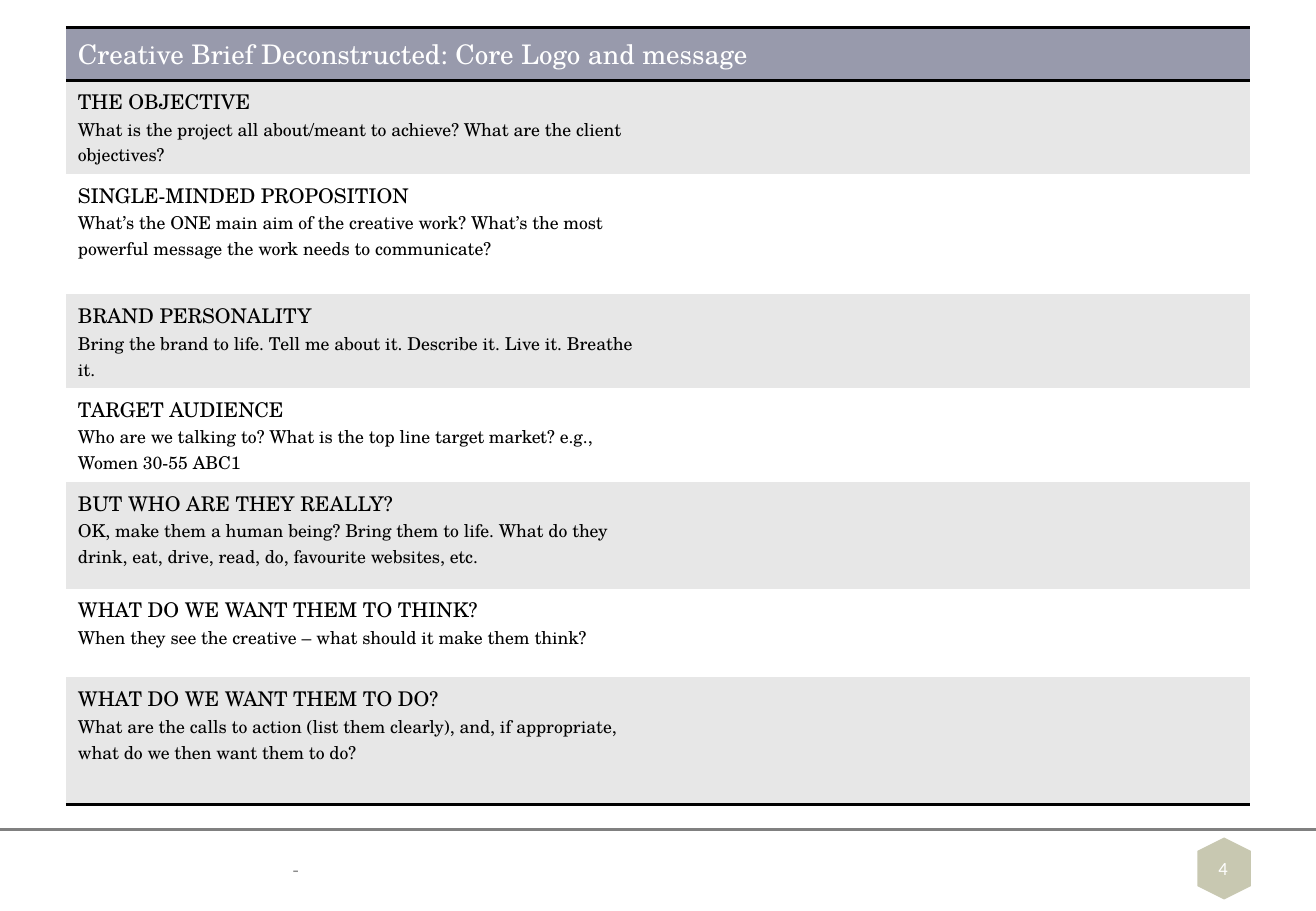
from lxml.etree import SubElement
from pptx import Presentation
from pptx.dml.color import RGBColor
from pptx.enum.shapes import MSO_CONNECTOR as Connector, MSO_SHAPE as Shape
from pptx.enum.text import MSO_ANCHOR as Anchor, PP_ALIGN as Align
from pptx.oxml import parse_xml
from pptx.oxml.ns import nsdecls, qn
from pptx.util import Inches, Pt

BLACK = RGBColor(0x00, 0x00, 0x00)
WHITE = RGBColor(0xFF, 0xFF, 0xFF)
HEADER = RGBColor(0x98, 0x9A, 0xAC)
BAND = RGBColor(0xE7, 0xE7, 0xE7)
RULE = RGBColor(0x80, 0x80, 0x80)
FOOTER = RGBColor(0x8C, 0x8C, 0x8C)
BADGE = RGBColor(0xC8, 0xC8, 0xB1)

PLAIN_TABLE = "{2D5ABB26-0587-4C30-8999-92F81FD0307C}"
TITLE = "Creative Brief Deconstructed: Core Logo and message"
HEADER_HEIGHT = 5.73
# Row height as a percentage of the slide, heading, question
BRIEF = [
    (10.27, "THE OBJECTIVE",
     "What is the project all about/meant to achieve? What are the client objectives?"),
    (13.2, "SINGLE-MINDED PROPOSITION",
     "What’s the ONE main aim of the creative work? What’s the most powerful "
     "message the work needs to communicate?"),
    (10.27, "BRAND PERSONALITY",
     "Bring the brand to life. Tell me about it. Describe it. Live it. Breathe it."),
    (10.27, "TARGET AUDIENCE",
     "Who are we talking to? What is the top line target market? e.g., Women 30-55 ABC1"),
    (11.73, "BUT WHO ARE THEY REALLY?",
     "OK, make them a human being? Bring them to life. What do they drink, eat, "
     "drive, read, do, favourite websites, etc."),
    (9.73, "WHAT DO WE WANT THEM TO THINK?",
     "When they see the creative – what should it make them think?"),
    (14, "WHAT DO WE WANT THEM TO DO?",
     "What are the calls to action (list them clearly), and, if appropriate, "
     "what do we then want them to do?"),
]


class BriefSlide:
    """Draws on one slide; lengths are percentages of the slide's size."""

    body_font = "TeX Gyre Schola"
    footer_font = "Calibri"
    line_width = Pt(2)

    def __init__(self, presentation):
        self.width = presentation.slide_width
        self.height = presentation.slide_height
        self.slide = presentation.slides.add_slide(presentation.slide_layouts[6])

    def across(self, share):
        return round(self.width * share / 100)

    def down(self, share):
        return round(self.height * share / 100)

    def box(self, left, top, width, height):
        return self.across(left), self.down(top), self.across(width), self.down(height)

    def style(self, paragraph, text, name, size, color):
        paragraph.text = text
        font = paragraph.font
        font.name, font.size, font.color.rgb = name, Pt(size), color

    def hexagon(self, *place, color):
        shape = self.slide.shapes.add_shape(Shape.HEXAGON, *self.box(*place))
        shape.rotation = 270
        shape.shadow.inherit = False
        shape.fill.solid()
        shape.fill.fore_color.rgb = color
        shape.line.fill.background()

    def rule(self, top, color):
        line = self.slide.shapes.add_connector(
            Connector.STRAIGHT, 0, self.down(top), self.width, self.down(top))
        line.line.color.rgb = color
        line.line.width = self.line_width
        SubElement(line._element.spPr, qn("a:effectLst"))

    def footer_text(self, text, *place, size, color, align=Align.LEFT):
        frame = self.slide.shapes.add_textbox(*self.box(*place)).text_frame
        frame.word_wrap = True
        frame.vertical_anchor = Anchor.MIDDLE
        paragraph = frame.paragraphs[0]
        paragraph.alignment = align
        self.style(paragraph, text, self.footer_font, size, color)

    def border(self, row, *sides):
        for cell in row.cells:
            properties = cell._tc.get_or_add_tcPr()
            for index, side in enumerate(sides):
                properties.insert(index, parse_xml(
                    f'<a:{side} {nsdecls("a")} w="{self.line_width}"><a:solidFill>'
                    f'<a:srgbClr val="{BLACK}"/></a:solidFill></a:{side}>'))

    def paint(self, row, color):
        for cell in row.cells:
            cell.fill.solid()
            cell.fill.fore_color.rgb = color

    def brief_table(self, left, top, columns, title, brief):
        heights = [HEADER_HEIGHT] + [height for height, _, _ in brief]
        table = self.slide.shapes.add_table(
            len(heights), len(columns),
            *self.box(left, top, sum(columns), sum(heights))).table
        table._tbl.tblPr.find(qn("a:tableStyleId")).text = PLAIN_TABLE
        table.first_row = table.horz_banding = False
        for column, width in zip(table.columns, columns):
            column.width = self.across(width)
        for row, height in zip(table.rows, heights):
            row.height = self.down(height)

        self.paint(table.rows[0], HEADER)
        heading = table.cell(0, 0)
        heading.merge(table.cell(0, len(columns) - 1))
        self.style(heading.text_frame.paragraphs[0], title, self.body_font, 16, WHITE)

        for index, (_, topic, question) in enumerate(brief, start=1):
            self.paint(table.rows[index], BAND if index % 2 else WHITE)
            frame = table.cell(index, 0).text_frame
            self.style(frame.paragraphs[0], topic, self.body_font, 12, BLACK)
            self.style(frame.add_paragraph(), question, self.body_font, 10.5, BLACK)

        self.border(table.rows[0], "lnT", "lnB")
        self.border(table.rows[len(brief)], "lnB")


def main():
    presentation = Presentation()
    presentation.slide_width = Inches(10.83)
    presentation.slide_height = Inches(7.5)
    slide = BriefSlide(presentation)
    slide.hexagon(90.67, 92.4, 4.71, 5.87, color=BADGE)
    slide.rule(91.07, RULE)
    slide.brief_table(5, 3.07, (44.6, 45.4), TITLE, BRIEF)
    slide.footer_text("-", 21.33, 92.4, 67.22, 6, size=12, color=FOOTER)
    slide.footer_text("4", 90.3, 92.67, 5.26, 5.33, size=11, color=WHITE,
                      align=Align.CENTER)
    presentation.save("out.pptx")


if __name__ == "__main__":
    main()
